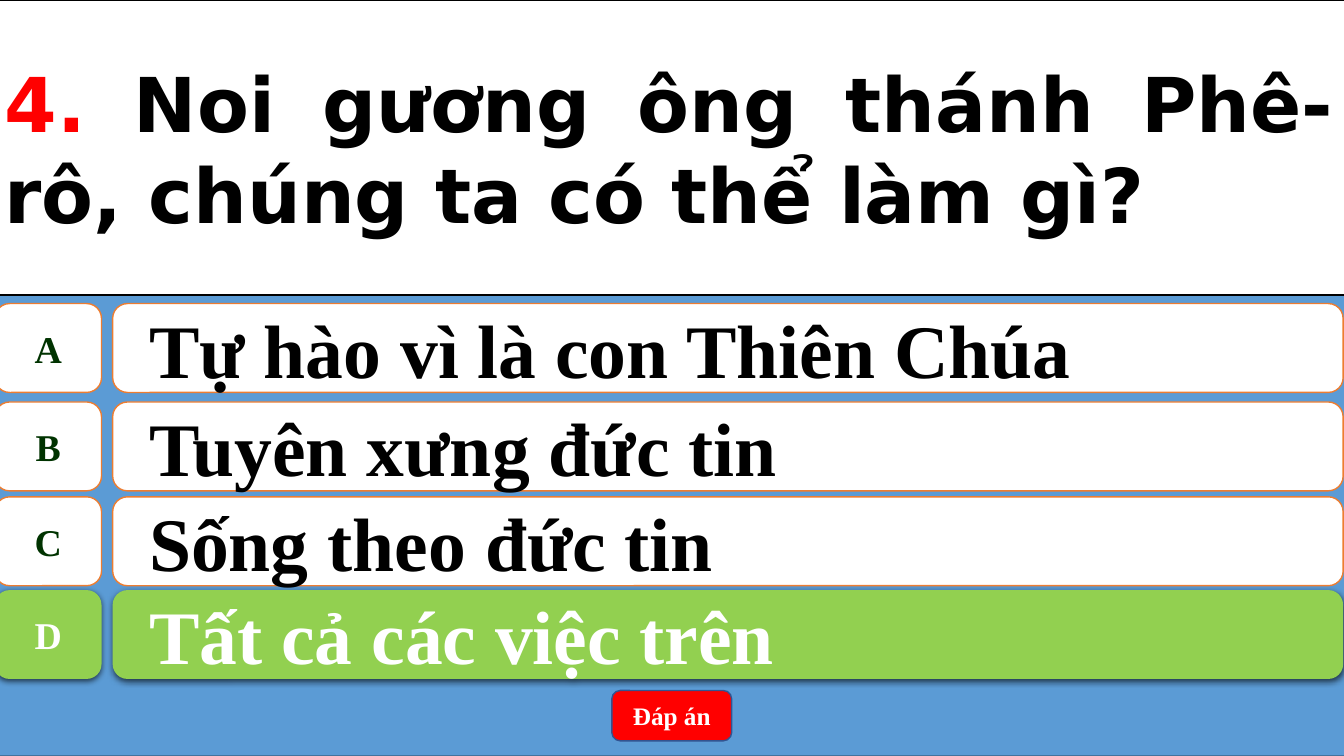
from dataclasses import dataclass

from lxml import etree
from pptx import Presentation
from pptx.dml.color import RGBColor
from pptx.enum import shapes, text
from pptx.oxml import ns
from pptx.util import Cm, Pt

HUES = {
    "sky": "5B9BD5", "navy": "43739E", "white": "FFFFFF", "black": "000000",
    "orange": "ED7D31", "pine": "003300", "lime": "92D050", "red": "FF0000",
    "blue": "325491",
}
KINDS = shapes.MSO_SHAPE
ALIGN = text.PP_ALIGN
SERIF, SANS = "Times New Roman", "DejaVu Sans"
LEFT, WIDE = -0.13, 34.01


@dataclass
class Box:
    kind: shapes.MSO_SHAPE
    left: float
    top: float
    width: float
    height: float
    fill: str
    line: str = ""


@dataclass
class Choice:
    mark: str
    words: str
    top: float
    right: bool = False


CHOICES = [
    Choice("A", "Tự hào vì là con Thiên Chúa", 7.65),
    Choice("B", "Tuyên xưng đức tin", 10.13),
    Choice("C", "Sống theo đức tin", 12.52),
    Choice("D", "Tất cả các việc trên", 14.87, True),
]


def hue(name: str) -> RGBColor:
    return RGBColor.from_string(HUES[name])


def draw(slide, box: Box):
    shape = slide.shapes.add_shape(
        box.kind, Cm(box.left), Cm(box.top), Cm(box.width), Cm(box.height))
    shape.shadow.inherit = False
    shape.fill.solid()
    shape.fill.fore_color.rgb = hue(box.fill)
    if box.line:
        shape.line.color.rgb = hue(box.line)
        shape.line.width = Pt(1)
    else:
        shape.line.fill.background()
    return shape


def write(shape, words: str, size: int, color: str,
          align=ALIGN.CENTER, face: str = SERIF, wrap: bool = True):
    """Fill the shape with one bold paragraph and return it."""
    frame = shape.text_frame
    frame.word_wrap = wrap
    frame.vertical_anchor = text.MSO_ANCHOR.MIDDLE
    para = frame.paragraphs[0]
    para.text = words
    para.alignment = align
    font = para.font
    font.name, font.size, font.bold = face, Pt(size), True
    font.color.rgb = hue(color)
    return para


def shade(shape) -> None:
    """Cast a soft black shadow straight down."""
    effects = shape.element.spPr.find(ns.qn("a:effectLst"))
    outer = etree.SubElement(
        effects, ns.qn("a:outerShdw"), blurRad=str(Pt(4.5)), dist=str(Pt(1.5)),
        dir="5400000", algn="ctr", rotWithShape="0")
    color = etree.SubElement(outer, ns.qn("a:srgbClr"), val=HUES["black"])
    etree.SubElement(color, ns.qn("a:alpha"), val="63000")


def answer(slide, item: Choice) -> None:
    fill, line = ("lime", "") if item.right else ("white", "orange")
    tag = draw(slide, Box(KINDS.FLOWCHART_ALTERNATE_PROCESS,
                          LEFT, item.top, 2.69, 2.24, fill, line))
    bar = draw(slide, Box(KINDS.ROUNDED_RECTANGLE,
                          2.84, item.top, 31.01, 2.24, fill, line))
    write(tag, item.mark, 27, "white" if item.right else "pine", wrap=False)
    para = write(bar, item.words, 54, "white" if item.right else "black",
                 ALIGN.LEFT)
    para.level = 1
    props = para._p.get_or_add_pPr()
    props.set("marL", str(Cm(1.27)))
    props.set("indent", str(Cm(-0.71)))
    if item.right:
        shade(tag)
        shade(bar)


def main() -> None:
    deck = Presentation()
    deck.slide_width, deck.slide_height = Cm(33.87), Cm(19.05)
    slide = deck.slides.add_slide(deck.slide_layouts[6])

    draw(slide, Box(KINDS.RECTANGLE, LEFT, 0, WIDE, 19.05, "sky", "navy"))
    for item in CHOICES:
        answer(slide, item)
    button = draw(slide, Box(KINDS.ROUNDED_RECTANGLE,
                             15.42, 17.4, 3.02, 1.27, "red", "blue"))
    write(button, "Đáp án", 18, "white")

    panel = draw(slide, Box(KINDS.RECTANGLE, LEFT, 0, WIDE, 7.44,
                            "white", "black"))
    para = write(panel, "4. ", 54, "black", ALIGN.JUSTIFY, SANS)
    para.runs[0].font.color.rgb = hue("red")
    para.add_run().text = "Noi gương ông thánh Phê-rô, chúng ta có thể làm gì?"

    deck.save("out.pptx")


if __name__ == "__main__":
    main()
